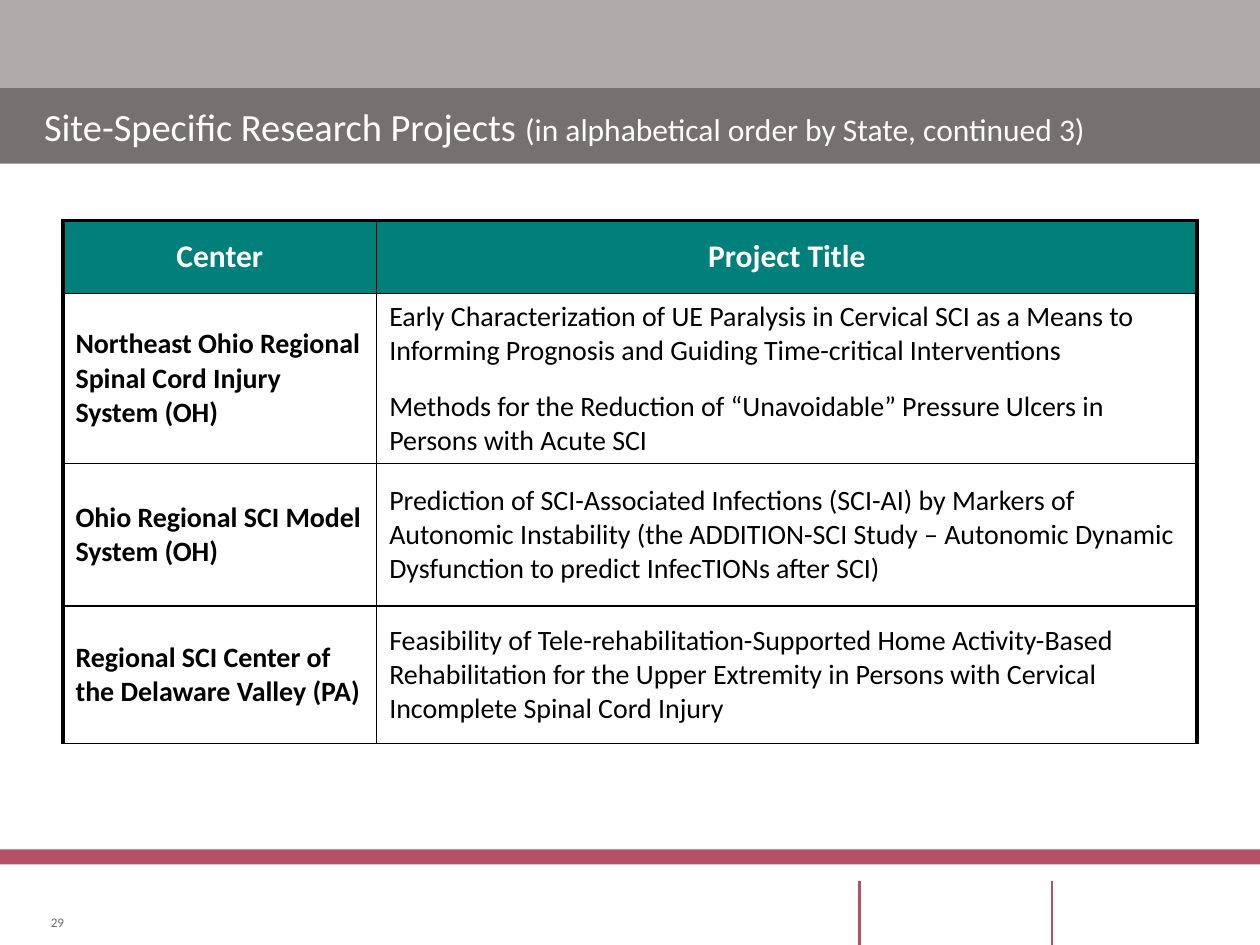
from lxml.etree import SubElement
from pptx import Presentation
from pptx.dml.color import RGBColor
from pptx.enum.shapes import MSO_CONNECTOR, MSO_SHAPE
from pptx.enum.text import MSO_ANCHOR, PP_ALIGN
from pptx.oxml import parse_xml
from pptx.oxml.ns import nsdecls, qn
from pptx.util import Inches, Pt

LIGHT_GRAY = RGBColor(0xAF, 0xAB, 0xAB)
DARK_GRAY = RGBColor(0x76, 0x71, 0x71)
NUMBER_GRAY = RGBColor(0x6F, 0x6A, 0x6A)
ROSE = RGBColor(0xB6, 0x50, 0x65)
TEAL = RGBColor(0x00, 0x7F, 0x7B)
WHITE = RGBColor(0xFF, 0xFF, 0xFF)
BLACK = RGBColor(0x00, 0x00, 0x00)

FONT = "Calibri"
THICK, THIN = 2.25, 1

# Top, height and colour of each full-width band
BANDS = [(0, 0.71, LIGHT_GRAY), (0.7, 0.6, DARK_GRAY), (6.74, 0.12, ROSE)]
FOOTER_RULES = [6.82, 8.35]

TITLE = [
    ("Site-Specific Research Projects ", 22),
    ("(in alphabetical order by State, continued 3)", 18),
]

HEADINGS = ["Center", "Project Title"]
PROJECTS = [
    ("Northeast Ohio Regional Spinal Cord Injury System (OH)", [
        "Early Characterization of UE Paralysis in Cervical SCI as a Means to "
        "Informing Prognosis and Guiding Time-critical Interventions",
        "Methods for the Reduction of “Unavoidable” Pressure Ulcers in "
        "Persons with Acute SCI",
    ]),
    ("Ohio Regional SCI Model System (OH)", [
        "Prediction of SCI-Associated Infections (SCI-AI) by Markers of "
        "Autonomic Instability (the ADDITION-SCI Study – Autonomic Dynamic "
        "Dysfunction to predict InfecTIONs after SCI)",
    ]),
    ("Regional SCI Center of the Delaware Valley (PA)", [
        "Feasibility of Tele-rehabilitation-Supported Home Activity-Based "
        "Rehabilitation for the Upper Extremity in Persons with Cervical "
        "Incomplete Spinal Cord Injury",
    ]),
]
COLUMN_WIDTHS = [2.49, 6.51]
ROW_HEIGHTS = [0.58, 1.35, 1.13, 1.09]


def set_values(target, values):
    for name, value in values.items():
        setattr(target, name, value)


def add_span(para, text, size, color, bold=False):
    span = para.add_run()
    span.text = text
    set_values(span.font, {"name": FONT, "size": Pt(size), "bold": bold})
    span.font.color.rgb = color


def add_band(page, top, height, color):
    band = page.shapes.add_shape(
        MSO_SHAPE.RECTANGLE, 0, Inches(top), Inches(10), Inches(height))
    band.shadow.inherit = False
    band.fill.solid()
    band.fill.fore_color.rgb = color
    band.line.fill.background()


def add_footer_rule(page, left):
    rule = page.shapes.add_connector(
        MSO_CONNECTOR.STRAIGHT, Inches(left), Inches(6.99), Inches(left), Inches(7.5))
    rule.line.color.rgb = ROSE
    rule.line.width = Pt(1.5)
    SubElement(rule._element.spPr, qn("a:effectLst"))


def add_text(page, area, spans, color, align, anchor, side=0, wrap=True):
    box = page.shapes.add_textbox(*map(Inches, area))
    frame = box.text_frame
    set_values(frame, {
        "margin_left": Inches(side), "margin_right": Inches(side),
        "margin_top": 0, "margin_bottom": 0,
        "vertical_anchor": anchor, "word_wrap": wrap,
    })
    para = frame.paragraphs[0]
    para.alignment = align
    for text, size in spans:
        add_span(para, text, size, color)


def set_borders(cell, widths):
    properties = cell._tc.get_or_add_tcPr()
    for index, (side, width) in enumerate(widths.items()):
        border = parse_xml(
            f'<a:ln{side} {nsdecls("a")} w="{Pt(width)}"><a:solidFill>'
            f'<a:srgbClr val="{BLACK}"/></a:solidFill></a:ln{side}>')
        properties.insert(index, border)


def fill_cell(cell, texts, size, color, bold, align, fill=None):
    cell.vertical_anchor = MSO_ANCHOR.MIDDLE
    if fill is None:
        cell.fill.background()
    else:
        cell.fill.solid()
        cell.fill.fore_color.rgb = fill
    frame = cell.text_frame
    for index, text in enumerate(texts):
        para = frame.add_paragraph() if index else frame.paragraphs[0]
        set_values(para, {
            "alignment": align,
            "space_before": Pt(6 if index else 0),
            "space_after": Pt(0 if fill else 6),
        })
        add_span(para, text, size, color, bold)


def add_project_table(page):
    table = page.shapes.add_table(
        len(ROW_HEIGHTS), len(COLUMN_WIDTHS), Inches(0.5), Inches(1.75),
        Inches(sum(COLUMN_WIDTHS)), Inches(sum(ROW_HEIGHTS))).table
    set_values(table, {"first_row": False, "horz_banding": False})
    for column, width in zip(table.columns, COLUMN_WIDTHS):
        column.width = Inches(width)
    for row, height in zip(table.rows, ROW_HEIGHTS):
        row.height = Inches(height)

    # Header row
    for column, heading in enumerate(HEADINGS):
        fill_cell(table.cell(0, column), [heading], 18, WHITE, True,
                  PP_ALIGN.CENTER, TEAL)

    # Centers and their projects
    for row, (center, titles) in enumerate(PROJECTS, start=1):
        fill_cell(table.cell(row, 0), [center], 16, BLACK, True, PP_ALIGN.LEFT)
        fill_cell(table.cell(row, 1), titles, 16, BLACK, False, PP_ALIGN.LEFT)

    # Thick outer edge on the left, top and right; thin lines elsewhere
    for row in range(len(ROW_HEIGHTS)):
        for column in range(len(COLUMN_WIDTHS)):
            set_borders(table.cell(row, column), {
                "L": THIN if column else THICK,
                "R": THICK if column else THIN,
                "T": THIN if row else THICK,
                "B": THIN,
            })


def main():
    deck = Presentation()
    deck.slide_width, deck.slide_height = Inches(10), Inches(7.5)
    page = deck.slides.add_slide(deck.slide_layouts[6])

    # Bands and footer rules
    for top, height, color in BANDS:
        add_band(page, top, height, color)
    for left in FOOTER_RULES:
        add_footer_rule(page, left)

    # Title, table and page number
    add_text(page, (0, 0.7, 10, 0.6), TITLE, WHITE, PP_ALIGN.LEFT,
             MSO_ANCHOR.MIDDLE, side=0.35)
    add_project_table(page)
    add_text(page, (0.38, 7.25, 0.13, 0.13), [("29", 7.5)], NUMBER_GRAY,
             PP_ALIGN.RIGHT, MSO_ANCHOR.BOTTOM, wrap=False)

    deck.save("out.pptx")


if __name__ == "__main__":
    main()
